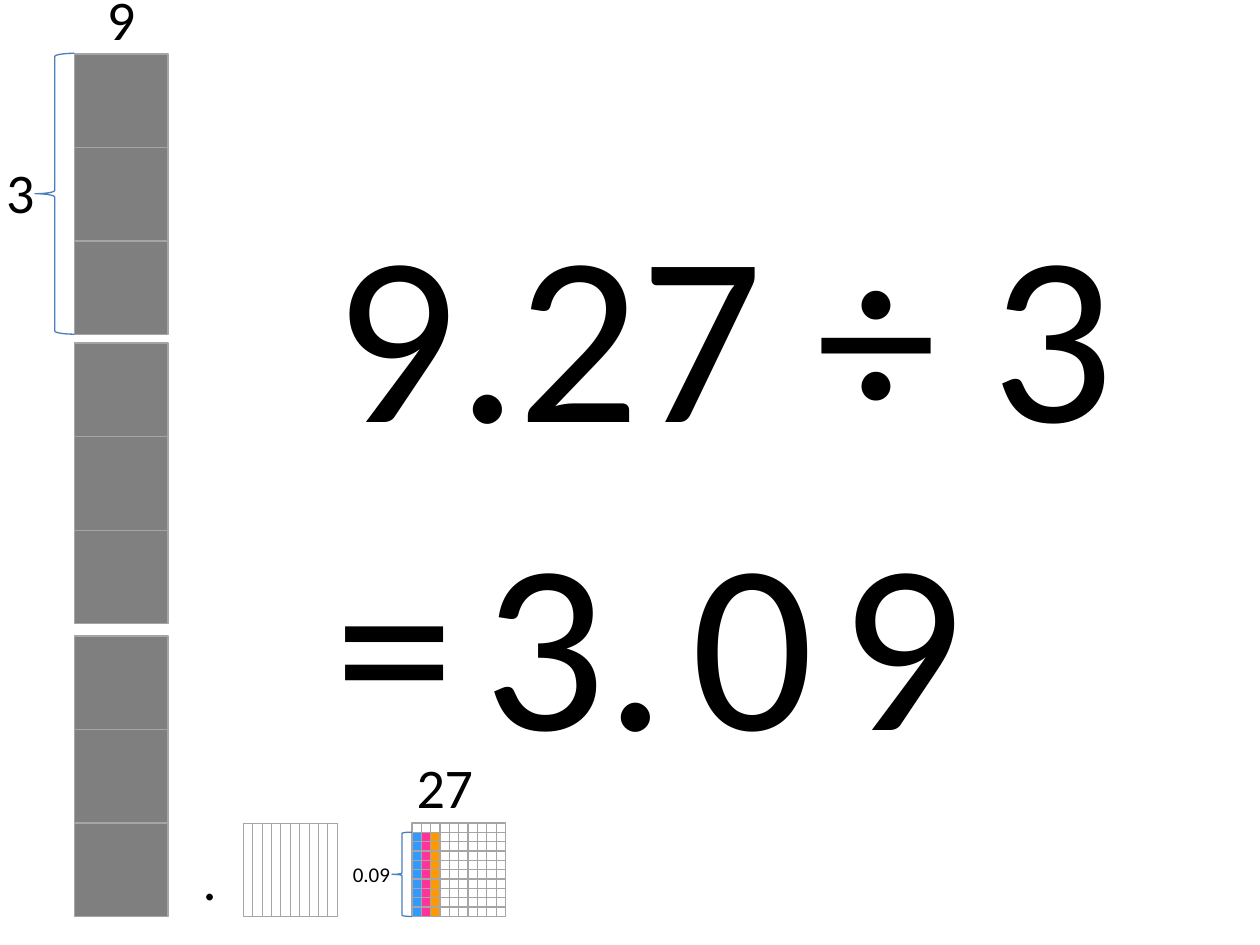
"""Build a slide that models 9.27 ÷ 3 with base-ten blocks."""
from pptx import Presentation
from pptx.dml.color import RGBColor
from pptx.enum.shapes import MSO_SHAPE
from pptx.enum.text import MSO_AUTO_SIZE
from pptx.util import Pt

RECTANGLE = MSO_SHAPE.RECTANGLE
LEFT_BRACE = MSO_SHAPE.LEFT_BRACE
GROW = MSO_AUTO_SIZE.SHAPE_TO_FIT_TEXT

BLACK = RGBColor(0x00, 0x00, 0x00)
WHITE = RGBColor(0xFF, 0xFF, 0xFF)
DARK_GRAY = RGBColor(0x7F, 0x7F, 0x7F)
MID_GRAY = RGBColor(0x80, 0x80, 0x80)
OUTLINE = RGBColor(0xA5, 0xA5, 0xA5)
BRACE_BLUE = RGBColor(0x4B, 0x7E, 0xBC)
SHARE_COLORS = (
    RGBColor(0x33, 0x99, 0xFF),
    RGBColor(0xFF, 0x33, 0x99),
    RGBColor(0xFF, 0x99, 0x00),
)

FONT = "Calibri"
LABEL_SIZE = 32
EQUATION_SIZE = 138
ONE = 53.5
PART = ONE / 10
ONES_LEFT = 42.5
TENTHS_LEFT = 139
HUNDREDTHS_LEFT = 235.4
DECIMALS_TOP = 470.2


def add_outlined(shapes, kind, left, top, width, height, line, weight, fill=None):
    outlined = shapes.add_shape(kind, Pt(left), Pt(top), Pt(width), Pt(height))
    outlined.shadow.inherit = False
    if fill is None:
        outlined.fill.background()
    else:
        outlined.fill.solid()
        outlined.fill.fore_color.rgb = fill
    outlined.line.color.rgb = line
    outlined.line.width = Pt(weight)
    return outlined


def add_block(shapes, left, top, width, height, fill=None, weight=0.75):
    add_outlined(shapes, RECTANGLE, left, top, width, height, OUTLINE, weight, fill)


def add_brace(shapes, left, top, width, height, curve=0.083):
    brace = add_outlined(
        shapes, LEFT_BRACE, left, top, width, height, BRACE_BLUE, 0.75
    )
    brace.adjustments[0] = curve


def add_label(shapes, text, left, top, width, height, size):
    label = shapes.add_textbox(Pt(left), Pt(top), Pt(width), Pt(height))
    frame = label.text_frame
    frame.word_wrap = False
    frame.auto_size = GROW
    run = frame.paragraphs[0].add_run()
    run.text = text
    run.font.name = FONT
    run.font.size = Pt(size)
    run.font.color.rgb = BLACK


def add_ones(shapes, top, fill):
    for row in range(3):
        add_block(shapes, ONES_LEFT, top + row * ONE, ONE, ONE, fill)


def add_tenths(shapes):
    for column in range(10):
        left = TENTHS_LEFT + column * PART
        add_block(shapes, left, DECIMALS_TOP, PART, ONE, WHITE, 0.25)


def add_hundredths(shapes):
    for column in range(10):
        for row in range(10):
            shared = column < len(SHARE_COLORS) and row > 0
            add_block(
                shapes,
                HUNDREDTHS_LEFT + column * PART,
                DECIMALS_TOP + row * PART,
                PART,
                PART,
                SHARE_COLORS[column] if shared else None,
            )


def add_equation(shapes):
    for text, left, top, width in (
        ("9.27 ÷ 3", 184.3, 100, 465),
        ("=", 184.3, 275.8, 84.2),
        ("3.", 269.3, 275.8, 120.2),
        ("0", 388, 275.8, 85),
        ("9", 473, 275.8, 85),
    ):
        add_label(shapes, text, left, top, width, 174.2, EQUATION_SIZE)


def main():
    deck = Presentation()
    deck.slide_width, deck.slide_height = Pt(720), Pt(540)
    shapes = deck.slides.add_slide(deck.slide_layouts[6]).shapes

    add_hundredths(shapes)
    add_tenths(shapes)
    add_ones(shapes, 363.4, DARK_GRAY)
    for text, left, top, width in (
        (".", 108.7, 478.8, 23),
        ("2", 231, 426.2, 31),
        ("7", 247, 426.2, 31),
    ):
        add_label(shapes, text, left, top, width, 46, LABEL_SIZE)
    add_equation(shapes)

    hundredths_share = shapes.add_group_shape().shapes
    add_brace(hundredths_share, 224, DECIMALS_TOP + PART, 11.4, 9 * PART, 0.059)
    add_label(hundredths_share, "0.09", 194.5, 488.9, 36, 21.6, 12)

    add_ones(shapes.add_group_shape().shapes, 196, MID_GRAY)

    ones_share = shapes.add_group_shape().shapes
    add_ones(ones_share, 30.8, DARK_GRAY)
    add_label(ones_share, "9", 54, -12.2, 31, 46, LABEL_SIZE)
    add_brace(ones_share, 20, 30.5, 22.5, 3 * ONE)
    add_label(ones_share, "3", -3.6, 86.4, 31, 46, LABEL_SIZE)

    deck.save("out.pptx")


if __name__ == "__main__":
    main()
